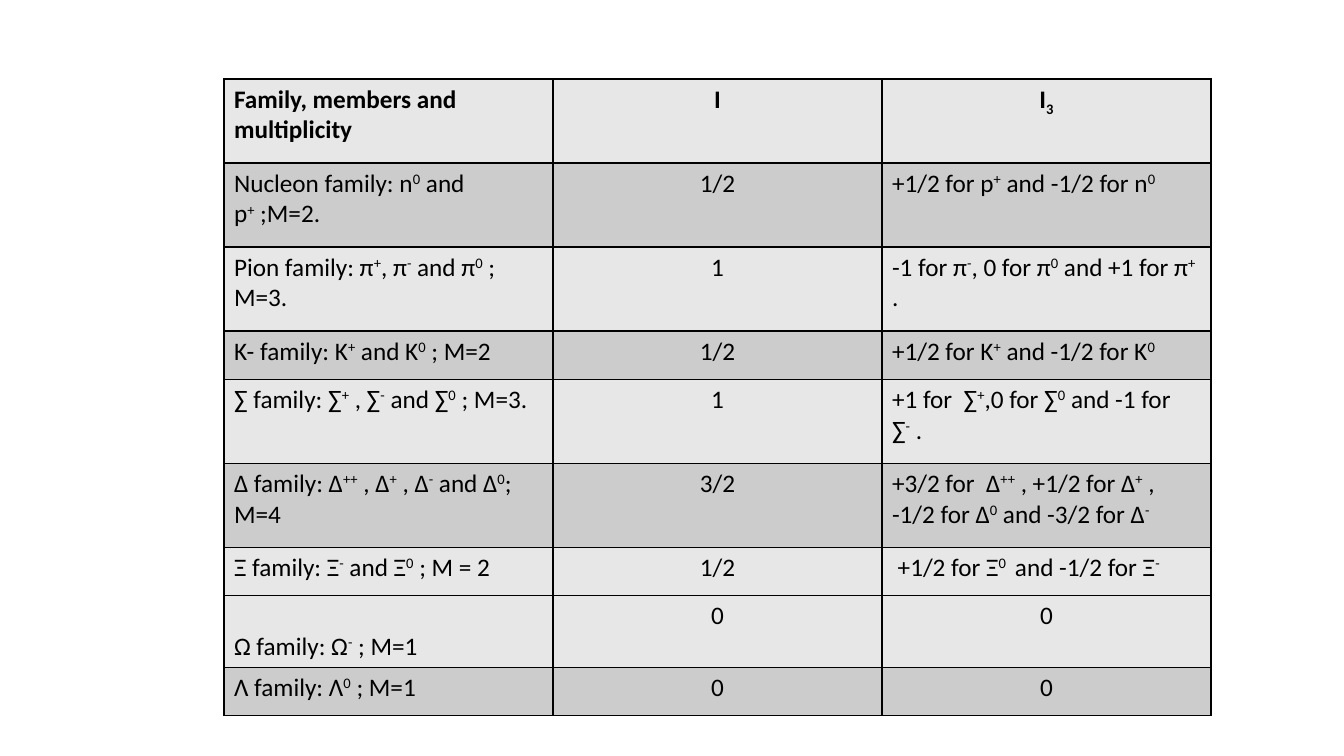
from lxml import etree
from pptx import Presentation
from pptx.dml.color import RGBColor
from pptx.enum.text import MSO_ANCHOR, PP_ALIGN
from pptx.oxml.ns import qn
from pptx.util import Pt

LEFT, CENTER = PP_ALIGN.LEFT, PP_ALIGN.CENTER
TOP, BOTTOM = MSO_ANCHOR.TOP, MSO_ANCHOR.BOTTOM
BLACK = RGBColor(0x00, 0x00, 0x00)
LIGHT = RGBColor(0xE7, 0xE7, 0xE7)
DARK = RGBColor(0xCC, 0xCC, 0xCC)

# Text between bars is raised; a leading underscore lowers it instead
MAIN = [
    ("Family, members and multiplicity", "I", "I|_3|"),
    ("Nucleon family: n|0| and p|+| ;M=2.", "1/2",
     "+1/2 for p|+| and -1/2 for n|0|"),
    ("Pion family: π|+|, π|-| and π|0| ; M=3.", "1",
     "-1 for π|-|, 0 for π|0| and +1 for π|+| ."),
    ("K- family: K|+| and K|0| ; M=2", "1/2",
     "+1/2 for K|+| and -1/2 for K|0|"),
    ("∑ family: ∑|+| , ∑|-| and ∑|0| ; M=3.", "1",
     "+1 for  ∑|+|,0 for ∑|0| and -1 for ∑|-| ."),
    ("Δ family: Δ|++| , Δ|+| , Δ|-| and Δ|0|; M=4", "3/2",
     "+3/2 for  Δ|++| , +1/2 for Δ|+| , -1/2 for Δ|0| and -3/2 for Δ|-|"),
    ("Ξ family: Ξ|-| and Ξ|0| ; M = 2", "1/2",
     " +1/2 for Ξ|0 | and -1/2 for Ξ|-|"),
]
LAST = [
    ("Ω family: Ω|-| ; M=1", "0", "0"),
    ("Λ family: Λ|0| ; M=1", "0", "0"),
]
SHORT, TALL, OMEGA = 34.5, 60, 51


class Sheet:
    """Holds the slide and the style of its tables."""

    font, size, line = "Calibri", 18, 1

    def __init__(self, slide):
        self.slide = slide

    def label(self, cell, text, bold, align):
        para = cell.text_frame.paragraphs[0]
        para.alignment = align
        for i, part in enumerate(text.split("|")):
            if not part:
                continue
            run = para.add_run()
            run.text = part.lstrip("_")
            run.font.name, run.font.size = self.font, Pt(self.size)
            run.font.bold = bold
            run.font.color.rgb = BLACK
            if i % 2:
                shift = "-25000" if part.startswith("_") else "30000"
                run.font._element.set("baseline", shift)

    def border(self, cell):
        props = cell._tc.get_or_add_tcPr()
        for side in ("a:lnL", "a:lnR", "a:lnT", "a:lnB"):
            edge = etree.SubElement(props, qn(side), w=str(Pt(self.line)))
            fill = etree.SubElement(edge, qn("a:solidFill"))
            etree.SubElement(fill, qn("a:srgbClr"), val=str(BLACK))

    def table(self, x, y, width, heights, rows, head=False):
        cols = len(rows[0])
        frame = self.slide.shapes.add_table(
            len(rows), cols, Pt(x), Pt(y), Pt(width * cols), Pt(sum(heights)))
        table = frame.table
        table.first_row = head
        table.horz_banding = False
        for col in table.columns:
            col.width = Pt(width)
        for r, (row, high) in enumerate(zip(rows, heights)):
            table.rows[r].height = Pt(high)
            for c, text in enumerate(row):
                cell = table.cell(r, c)
                top = head and r == 0
                mid = c == 1 or c == 2 and (top or text == "0")
                self.label(cell, text, top, CENTER if mid else LEFT)
                self.border(cell)
                cell.fill.solid()
                cell.fill.fore_color.rgb = DARK if r % 2 else LIGHT
                cell.vertical_anchor = TOP
        return table


def main():
    deck = Presentation()
    deck.slide_width, deck.slide_height = Pt(960), Pt(540)
    sheet = Sheet(deck.slides.add_slide(deck.slide_layouts[6]))

    # Families with their isospin
    tall = [TALL] * 3 + [SHORT] + [TALL] * 2 + [SHORT]
    x, y, width = 160, 56.5, 235
    sheet.table(x, y, width, tall, MAIN, head=True)

    # Singlet families, directly below
    single = sheet.table(x, y + sum(tall), width, [OMEGA, SHORT], LAST)
    single.cell(0, 0).vertical_anchor = BOTTOM

    deck.save("out.pptx")


if __name__ == "__main__":
    main()
